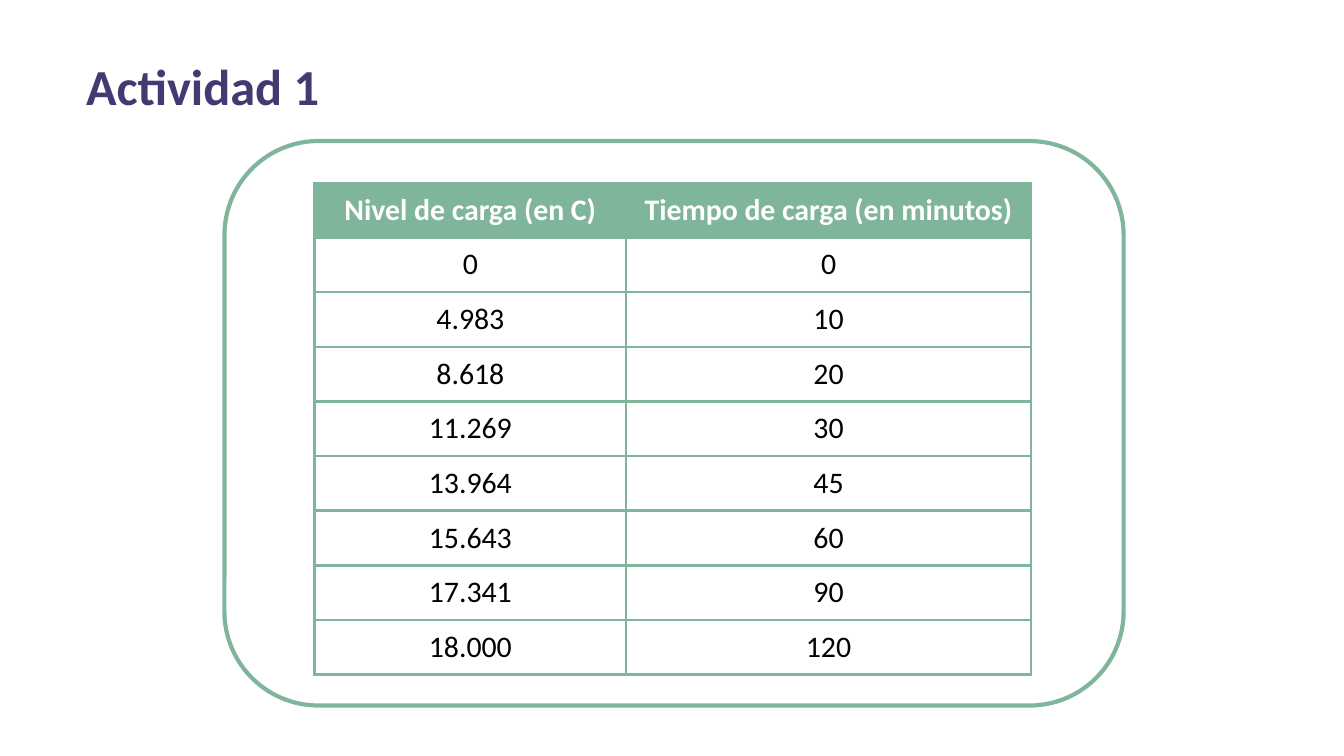
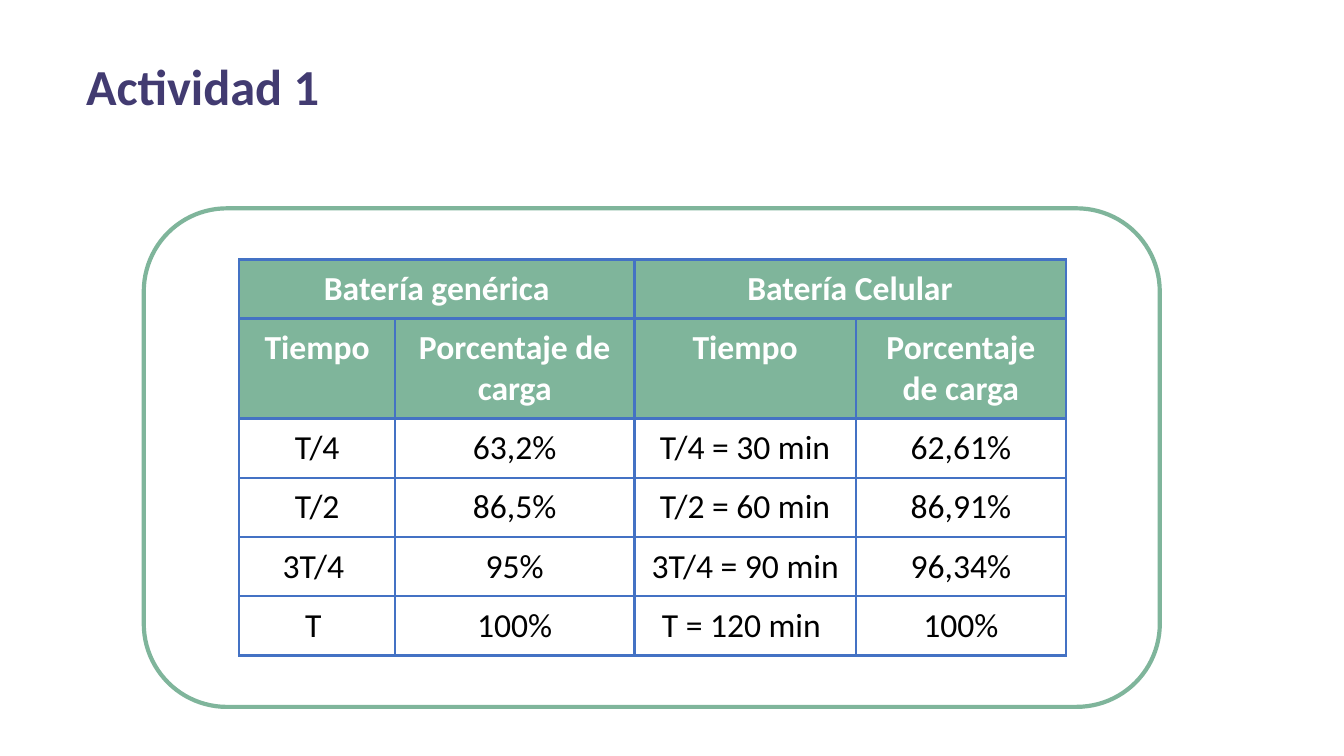
from dataclasses import dataclass
from typing import Optional

from lxml.etree import SubElement
from pptx import Presentation
from pptx.dml.color import RGBColor
from pptx.enum.shapes import MSO_SHAPE
from pptx.enum.text import MSO_ANCHOR, PP_ALIGN
from pptx.oxml.ns import qn
from pptx.slide import Slide
from pptx.table import _Cell
from pptx.text.text import TextFrame
from pptx.util import Inches, Pt

FONT = "Calibri"
PURPLE = RGBColor(0x42, 0x3B, 0x71)
GREEN = RGBColor(0x7F, 0xB5, 0x9B)
BLUE = RGBColor(0x44, 0x72, 0xC4)
WHITE = RGBColor(0xFF, 0xFF, 0xFF)
BLACK = RGBColor(0x00, 0x00, 0x00)

TITLE_ONLY = 5
BORDER_WIDTH = Pt(1.5)
SIDE_MARGIN = 0.07
CELL_MARGIN = 0.27 / 4

Row = tuple[Optional[str], ...]


@dataclass(frozen=True)
class Area:
    left: float
    top: float
    width: float
    height: float

    def lengths(self) -> tuple[Inches, ...]:
        return tuple(map(Inches, (self.left, self.top, self.width, self.height)))


@dataclass(frozen=True)
class Activity:
    """One page; a None cell is merged into the cell on its left."""

    title: str
    frame: Area
    left: float
    top: float
    columns: tuple[float, ...]
    row_heights: tuple[float, ...]
    header_rows: int
    size: float
    border: RGBColor
    rows: tuple[Row, ...]


TITLE_AREA = Area(0.57, 0.37, 5.8, 0.53)

CHARGE_LEVELS = Activity(
    title="Actividad 1",
    frame=Area(1.67, 1.05, 6.69, 4.2),
    left=2.34,
    top=1.36,
    columns=(2.32, 3.01),
    row_heights=(3.65 / 9,) * 9,
    header_rows=1,
    size=16,
    border=GREEN,
    rows=(
        ("Nivel de carga (en C)", "Tiempo de carga (en minutos)"),
        ("0", "0"),
        ("4.983", "10"),
        ("8.618", "20"),
        ("11.269", "30"),
        ("13.964", "45"),
        ("15.643", "60"),
        ("17.341", "90"),
        ("18.000", "120"),
    ),
)

BATTERY_COMPARISON = Activity(
    title="Actividad 1",
    frame=Area(1.07, 1.55, 7.56, 3.71),
    left=1.78,
    top=1.93,
    columns=(1.16, 1.78, 1.65, 1.56),
    row_heights=(0.44, 0.74) + (0.44,) * 4,
    header_rows=2,
    size=18,
    border=BLUE,
    rows=(
        ("Batería genérica", None, "Batería Celular", None),
        ("Tiempo", "Porcentaje de carga") * 2,
        ("T/4", "63,2%", "T/4 = 30 min", "62,61%"),
        ("T/2", "86,5%", "T/2 = 60 min", "86,91%"),
        ("3T/4 ", "95%", "3T/4 = 90 min", "96,34%"),
        ("T ", "100%", "T = 120 min ", "100%"),
    ),
)


def write_text(
    frame: TextFrame,
    text: str,
    *,
    size: float,
    color: RGBColor,
    bold: bool = False,
    align: PP_ALIGN = PP_ALIGN.LEFT,
) -> None:
    para = frame.paragraphs[0]
    para.alignment = align
    span = para.add_run()
    span.text = text
    span.font.name = FONT
    span.font.size = Pt(size)
    span.font.bold = bold
    span.font.color.rgb = color


def set_margins(target: TextFrame | _Cell, vertical: float) -> None:
    target.margin_left = target.margin_right = Inches(SIDE_MARGIN)
    target.margin_top = target.margin_bottom = Inches(vertical)


def add_title(page: Slide, text: str) -> None:
    title = page.shapes.title
    title.left, title.top, title.width, title.height = TITLE_AREA.lengths()
    frame = title.text_frame
    frame.word_wrap = True
    frame.vertical_anchor = MSO_ANCHOR.TOP
    set_margins(frame, 0.04)
    write_text(frame, text, size=27, color=PURPLE, bold=True)


def add_frame(page: Slide, area: Area) -> None:
    frame = page.shapes.add_shape(MSO_SHAPE.ROUNDED_RECTANGLE, *area.lengths())
    frame.adjustments[0] = 1 / 6
    frame.shadow.inherit = False
    frame.fill.background()
    frame.line.color.rgb = GREEN
    frame.line.width = Pt(2.25)


def set_borders(cell: _Cell, color: RGBColor) -> None:
    properties = cell._tc.get_or_add_tcPr()
    for position, side in enumerate(("lnL", "lnR", "lnT", "lnB")):
        line = SubElement(properties, qn(f"a:{side}"), w=str(BORDER_WIDTH))
        fill = SubElement(line, qn("a:solidFill"))
        SubElement(fill, qn("a:srgbClr"), val=str(color))
        properties.insert(position, line)


def format_cell(cell: _Cell, is_header: bool, border: RGBColor) -> None:
    set_margins(cell, CELL_MARGIN)
    if is_header:
        cell.fill.solid()
        cell.fill.fore_color.rgb = GREEN
    else:
        cell.fill.background()
    set_borders(cell, border)


def add_activity_table(page: Slide, activity: Activity) -> None:
    area = Area(
        activity.left, activity.top, sum(activity.columns), sum(activity.row_heights)
    )
    table = page.shapes.add_table(
        len(activity.rows), len(activity.columns), *area.lengths()
    ).table
    table.first_row = table.horz_banding = False
    for column, width in zip(table.columns, activity.columns):
        column.width = Inches(width)
    for row, height in zip(table.rows, activity.row_heights):
        row.height = Inches(height)

    for row_index, row in enumerate(activity.rows):
        is_header = row_index < activity.header_rows
        for column_index, text in enumerate(row):
            cell = table.cell(row_index, column_index)
            format_cell(cell, is_header, activity.border)
            if text is None:
                table.cell(row_index, column_index - 1).merge(cell)
                continue
            write_text(
                cell.text_frame,
                text,
                size=activity.size,
                color=WHITE if is_header else BLACK,
                bold=is_header,
                align=PP_ALIGN.CENTER,
            )


def main() -> None:
    deck = Presentation()
    deck.slide_width = Inches(10)
    deck.slide_height = Inches(10 * 9 / 16)
    for activity in (CHARGE_LEVELS, BATTERY_COMPARISON):
        page = deck.slides.add_slide(deck.slide_layouts[TITLE_ONLY])
        add_title(page, activity.title)
        add_activity_table(page, activity)
        add_frame(page, activity.frame)
    deck.save("out.pptx")


if __name__ == "__main__":
    main()
